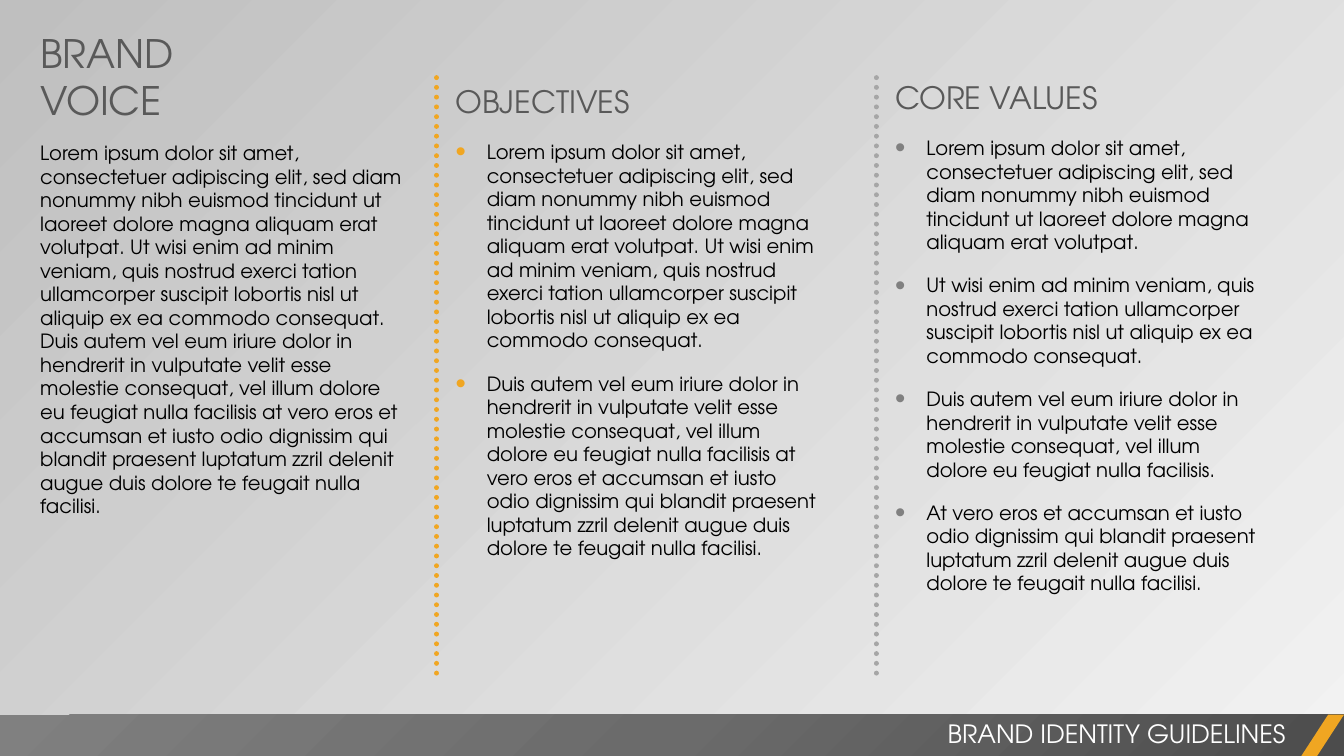
from lxml import etree
from pptx import Presentation
from pptx.dml.color import RGBColor
from pptx.enum.dml import MSO_LINE
from pptx.enum.shapes import MSO_CONNECTOR, MSO_SHAPE
from pptx.enum.text import MSO_AUTO_SIZE, PP_ALIGN
from pptx.oxml import parse_xml
from pptx.oxml.ns import nsdecls, qn
from pptx.util import Inches, Pt

FONT = "TeX Gyre Adventor"
ORANGE, GRAY, HEADING = "F0A622", "808080", "595959"
BLACK, WHITE, DOT_GRAY = "000000", "FFFFFF", "A6A6A6"
LEFT, RIGHT = PP_ALIGN.LEFT, PP_ALIGN.RIGHT
RECTANGLE, PARALLELOGRAM = MSO_SHAPE.RECTANGLE, MSO_SHAPE.PARALLELOGRAM
STRAIGHT = MSO_CONNECTOR.STRAIGHT
ROUND_DOT = MSO_LINE.ROUND_DOT
GROW = MSO_AUTO_SIZE.SHAPE_TO_FIT_TEXT
INDENT = Inches(0.31)

OPENING = "Lorem ipsum dolor sit amet, consectetuer adipiscing elit, sed diam nonummy nibh euismod tincidunt ut laoreet dolore magna aliquam erat volutpat."
WISI = "Ut wisi enim ad minim veniam, quis nostrud exerci tation ullamcorper suscipit lobortis nisl ut aliquip ex ea commodo consequat."
DUIS = "Duis autem vel eum iriure dolor in hendrerit in vulputate velit esse molestie consequat, vel illum dolore eu feugiat nulla facilisis"
VERO = "vero eros et accumsan et iusto odio dignissim qui blandit praesent luptatum zzril delenit augue duis dolore te feugait nulla facilisi."

FIRST_HALF = f"{OPENING} {WISI}"
SECOND_HALF = f"{DUIS} at {VERO}"
OBJECTIVES = [FIRST_HALF, SECOND_HALF]
CORE_VALUES = [OPENING, WISI, f"{DUIS}.", f"At {VERO}"]


def color(value):
    """Turn a hex string into a colour."""
    return RGBColor.from_string(value)


def add_bullet(para, bullet_color):
    """Give a paragraph a hanging, coloured bullet."""
    props = para._p.get_or_add_pPr()
    props.set("marL", str(INDENT))
    props.set("indent", str(-INDENT))
    holder = etree.SubElement(props, qn("a:buClr"))
    etree.SubElement(holder, qn("a:srgbClr"), val=bullet_color)
    etree.SubElement(props, qn("a:buSzPct"), val="150000")
    etree.SubElement(props, qn("a:buFont"), typeface="Arial")
    etree.SubElement(props, qn("a:buChar"), char="•")


def add_text(page, left, top, width, height, texts, size, text_color,
             align=LEFT, bullet_color=None):
    """Place a text box with one paragraph per text."""
    box = page.shapes.add_textbox(Inches(left), Inches(top), Inches(width), Inches(height))
    frame = box.text_frame
    frame.word_wrap = True
    frame.auto_size = GROW
    for index, text in enumerate(texts):
        para = frame.add_paragraph() if index else frame.paragraphs[0]
        if bullet_color:
            add_bullet(para, bullet_color)
        para.alignment = align
        if index:
            para.space_before = Pt(14)
        span = para.add_run()
        span.text = text
        span.font.name = FONT
        span.font.size = Pt(size)
        span.font.color.rgb = color(text_color)


def add_divider(page, left, top, height, line_color):
    """Draw a vertical line of round dots."""
    divider = page.shapes.add_connector(
        STRAIGHT, Inches(left), Inches(top), Inches(left), Inches(top + height))
    divider.line.width = Pt(3.5)
    divider.line.color.rgb = color(line_color)
    divider.line.dash_style = ROUND_DOT
    divider.line._get_or_add_ln().set("cap", "rnd")
    etree.SubElement(divider._element.spPr, qn("a:effectLst"))


def add_intro(page, left, top):
    """Place the title and the opening text."""
    add_text(page, left, top, 2.67, 1.04, ["BRAND VOICE"], 28, HEADING)
    add_text(page, left, top + 1.11, 3.8, 3.87, [f"{FIRST_HALF} {SECOND_HALF}"], 14, BLACK)


def add_list_column(page, left, top, height, heading, items, bullet_color):
    """Place a heading with a bulleted list below it."""
    add_text(page, left, top, 4.03, 0.47, [heading], 22, HEADING)
    add_text(page, left, top + 0.57, 3.8, height, items, 14, BLACK, bullet_color=bullet_color)


def add_band_part(page, kind, left, top, width, height):
    """Place an unlined shape of the footer and return it."""
    part = page.shapes.add_shape(kind, Inches(left), Inches(top), Inches(width), Inches(height))
    part.shadow.inherit = False
    part.line.fill.background()
    part.fill.solid()
    return part


def add_footer(page, top, width, height):
    """Place the shaded band, its slanted accent and its label."""
    band = add_band_part(page, RECTANGLE, 0, top, width, height)
    stops = "".join(
        f'<a:gs pos="{position}"><a:srgbClr val="{value}"/></a:gs>'
        for position, value in ((0, "4C4C4C"), (50000, "6B6B6B"), (100000, GRAY)))
    gradient = parse_xml(
        f'<a:gradFill {nsdecls("a")} rotWithShape="1"><a:gsLst>{stops}</a:gsLst>'
        '<a:path path="circle"><a:fillToRect l="100000" t="100000"/></a:path></a:gradFill>')
    props = band._element.spPr
    props.replace(props.find(qn("a:solidFill")), gradient)

    accent = add_band_part(page, PARALLELOGRAM, width - 0.43, top, 0.43, height)
    accent.adjustments[0] = 0.65
    accent.fill.fore_color.rgb = color(ORANGE)
    add_text(page, width - 8.08, top - 0.01, 7.6, 0.4,
             ["BRAND IDENTITY GUIDELINES"], 18, WHITE, RIGHT)


def add_background(page):
    """Shade the page from its light lower right to its upper left."""
    fill = page.background.fill
    fill.gradient()
    fill.gradient_angle = 135
    for stop, value in zip(fill.gradient_stops, ("F2F2F2", "BFBFBF")):
        stop.color.rgb = color(value)


def main():
    """Build and save the slide."""
    deck = Presentation()
    deck.slide_width, deck.slide_height = Inches(13.33), Inches(7.5)
    page = deck.slides.add_slide(deck.slide_layouts[6])
    add_background(page)
    add_footer(page, 7.09, 13.33, 0.42)
    add_intro(page, 0.3, 0.24)
    add_list_column(page, 4.42, 0.77, 4.3, "OBJECTIVES", OBJECTIVES, ORANGE)
    add_list_column(page, 8.78, 0.73, 4.7, "CORE VALUES", CORE_VALUES, GRAY)
    add_divider(page, 4.33, 0.77, 6, ORANGE)
    add_divider(page, 8.69, 0.77, 6, DOT_GRAY)
    deck.save("out.pptx")


if __name__ == "__main__":
    main()
